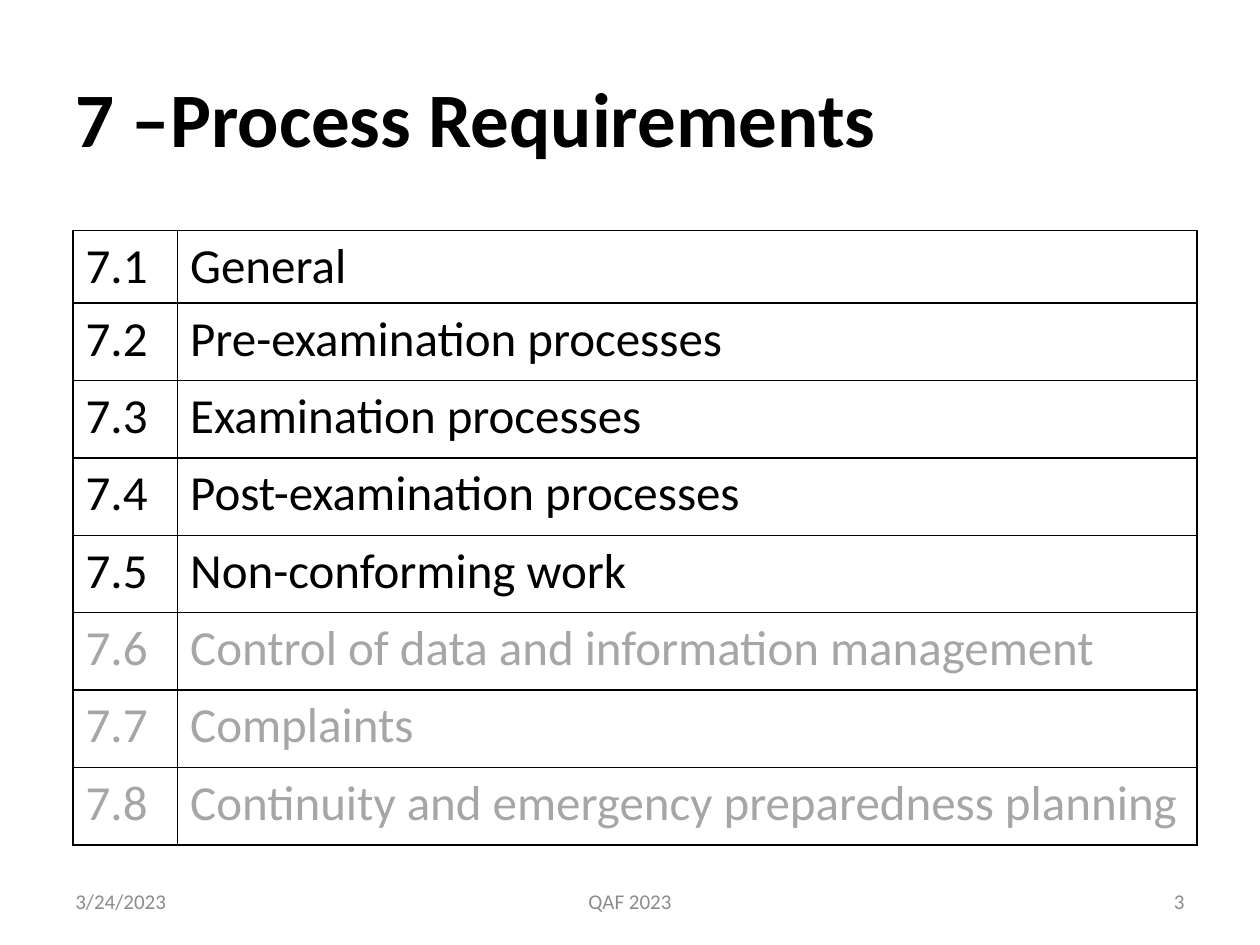
from lxml import etree
from pptx import Presentation
from pptx.dml.color import RGBColor
from pptx.enum.text import MSO_ANCHOR, PP_ALIGN
from pptx.oxml.ns import qn
from pptx.util import Inches, Pt

LEFT, CENTER, RIGHT = PP_ALIGN.LEFT, PP_ALIGN.CENTER, PP_ALIGN.RIGHT
MIDDLE = MSO_ANCHOR.MIDDLE
BLACK = RGBColor(0x00, 0x00, 0x00)
MUTED = RGBColor(0xA6, 0xA6, 0xA6)
FOOTER_GRAY = RGBColor(0x8C, 0x8C, 0x8C)
TITLE_ONLY = 5


def write(frame, text, size, color, align=LEFT, bold=False):
    paragraph = frame.paragraphs[0]
    paragraph.text = text
    paragraph.alignment = align
    font = paragraph.runs[0].font
    font.color.rgb = color
    for name, value in {"name": "Calibri", "size": Pt(size), "bold": bold}.items():
        setattr(font, name, value)


def add_borders(cell):
    properties = cell._tc.get_or_add_tcPr()
    for position, side in enumerate(("a:lnL", "a:lnR", "a:lnT", "a:lnB")):
        line = etree.Element(qn(side), w=str(Pt(1)))
        fill = etree.SubElement(line, qn("a:solidFill"))
        etree.SubElement(fill, qn("a:srgbClr"), val=str(BLACK))
        properties.insert(position, line)


prs = Presentation()
prs.slide_width, prs.slide_height = Inches(10), Inches(7.5)
slide = prs.slides.add_slide(prs.slide_layouts[TITLE_ONLY])
margin = Inches(0.5)
content_width = prs.slide_width - 2 * margin

title = slide.shapes.title
title_place = {"left": margin, "top": Inches(0.3), "width": content_width, "height": Inches(1.25)}
for name, value in title_place.items():
    setattr(title, name, value)
title.text_frame.vertical_anchor = MIDDLE
write(title.text_frame, "7 –Process Requirements", 44, BLACK, bold=True)

clauses = [
    "General",
    "Pre-examination processes",
    "Examination processes",
    "Post-examination processes",
    "Non-conforming work",
    "Control of data and information management",
    "Complaints",
    "Continuity and emergency preparedness planning",
]
covered_clauses = 5
table_width, table_height = Inches(8.92), Inches(4.87)
number_width, first_height = Inches(0.83), Inches(0.57)

clause_table = slide.shapes.add_table(
    len(clauses), 2, Inches(0.58), Inches(1.83), table_width, table_height
).table
clause_table.first_row = clause_table.horz_banding = False
clause_table.columns[0].width = number_width
clause_table.columns[1].width = table_width - number_width

other_height = (table_height - first_height) // (len(clauses) - 1)
for index, clause in enumerate(clauses):
    clause_table.rows[index].height = other_height if index else first_height
    color = BLACK if index < covered_clauses else MUTED
    for column, text in enumerate((f"7.{index + 1}", clause)):
        cell = clause_table.cell(index, column)
        cell.fill.background()
        add_borders(cell)
        write(cell.text_frame, text, 28, color)

side_width, middle_width = Inches(2.33), Inches(3.17)
footers = [
    ("3/24/2023", margin, side_width, LEFT),
    ("QAF 2023", (prs.slide_width - middle_width) // 2, middle_width, CENTER),
    ("3", prs.slide_width - margin - side_width, side_width, RIGHT),
]
for text, left, width, align in footers:
    footer = slide.shapes.add_textbox(left, Inches(6.95), width, Inches(0.4)).text_frame
    for name, value in {"word_wrap": True, "vertical_anchor": MIDDLE}.items():
        setattr(footer, name, value)
    write(footer, text, 12, FOOTER_GRAY, align)

prs.save("out.pptx")
